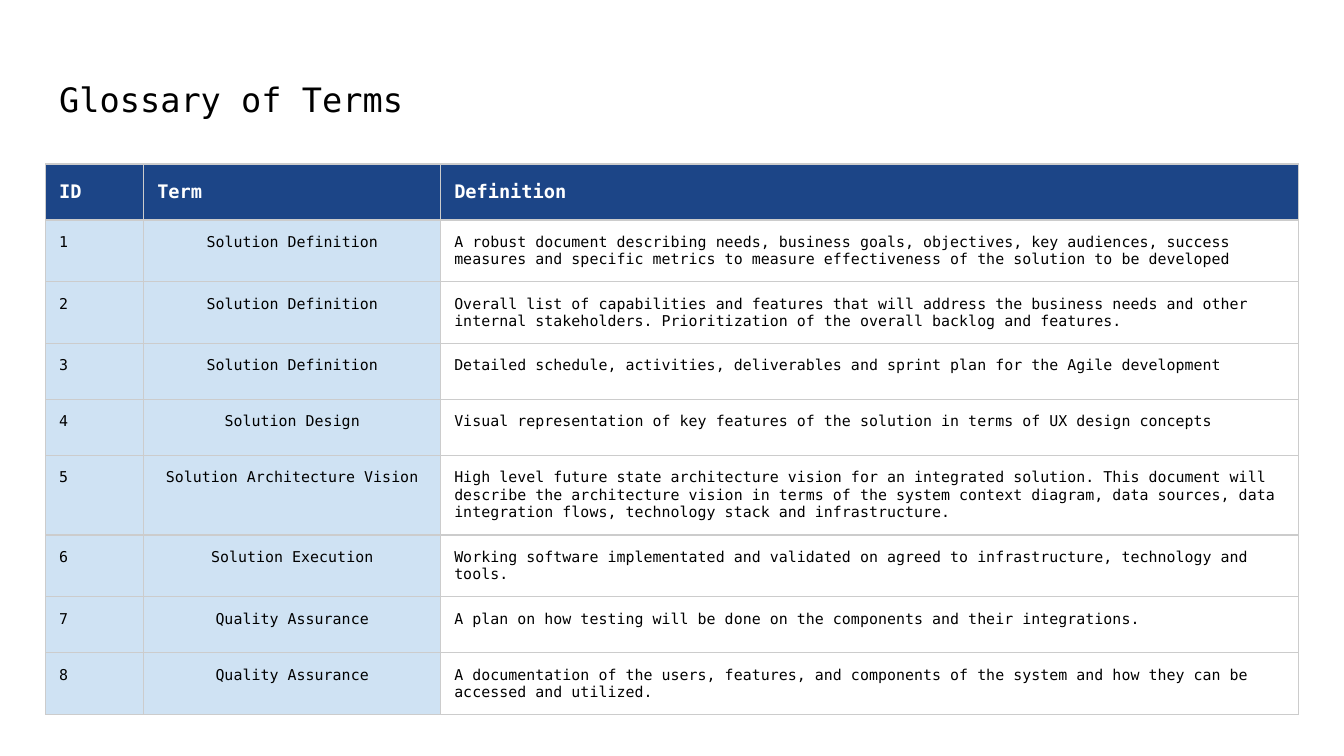
"""Build the Glossary of Terms slide with its table of definitions."""
import pptx
import pptx.dml.color
import pptx.enum.text
import pptx.oxml
import pptx.oxml.ns
import pptx.util

Inches = pptx.util.Inches
FONT = "DejaVu Sans Mono"
COLORS = {
    "white": "FFFFFF",
    "black": "000000",
    "header": "1C4587",
    "key": "CFE2F3",
    "border": "CCCCCC",
}
HEADINGS = ("ID", "Term", "Definition")
GLOSSARY = [
    ("Solution Definition", "A robust document describing needs, business goals, objectives, key audiences, "
     "success measures and specific metrics to measure effectiveness of the solution to be developed"),
    ("Solution Definition", "Overall list of capabilities and features that will address the business needs and "
     "other internal stakeholders. Prioritization of the overall backlog and features."),
    ("Solution Definition", "Detailed schedule, activities, deliverables and sprint plan for the Agile development"),
    ("Solution Design", "Visual representation of key features of the solution in terms of UX design concepts"),
    ("Solution Architecture Vision", "High level future state architecture vision for an integrated solution. "
     "This document will describe the architecture vision in terms of the system context diagram, data sources, "
     "data integration flows, technology stack and infrastructure."),
    ("Solution Execution", "Working software implementated and validated on agreed to infrastructure, "
     "technology and tools."),
    ("Quality Assurance", "A plan on how testing will be done on the components and their integrations."),
    ("Quality Assurance", "A documentation of the users, features, and components of the system and how they "
     "can be accessed and utilized."),
]
COLUMN_WIDTHS = (0.73, 2.21, 6.38)
ROW_HEIGHT = Inches(5) // 12


def write(paragraph, text, size, color, bold=False, centered=False):
    """Add one formatted run to a paragraph."""
    align = pptx.enum.text.PP_ALIGN
    paragraph.alignment = align.CENTER if centered else align.LEFT
    run = paragraph.add_run()
    run.text = text
    run.font.name = FONT
    run.font.size = pptx.util.Pt(size)
    run.font.bold = bold
    run.font.color.rgb = pptx.dml.color.RGBColor.from_string(COLORS[color])


def style_cell(cell, fill):
    """Give a cell its margins, borders and fill."""
    cell.margin_left = cell.margin_right = cell.margin_top = cell.margin_bottom = Inches(0.1)
    for side in ("lnL", "lnR", "lnT", "lnB"):
        cell._tc.get_or_add_tcPr().append(pptx.oxml.parse_xml(
            f'<a:{side} {pptx.oxml.ns.nsdecls("a")} w="{pptx.util.Pt(0.75)}"><a:solidFill>'
            f'<a:srgbClr val="{COLORS["border"]}"/></a:solidFill></a:{side}>'))
    if fill:
        cell.fill.solid()
        cell.fill.fore_color.rgb = pptx.dml.color.RGBColor.from_string(COLORS[fill])
    else:
        cell.fill.background()


deck = pptx.Presentation()
deck.slide_width = Inches(10)
deck.slide_height = deck.slide_width * 9 // 16
slide = deck.slides.add_slide(deck.slide_layouts[5])
slide.background.fill.solid()
slide.background.fill.fore_color.rgb = pptx.dml.color.RGBColor.from_string(COLORS["white"])

title = slide.shapes.title
title.left, title.top, title.width, title.height = map(Inches, (0.34, 0.49, 9.32, 0.63))
heading = title.text_frame
heading.margin_left = heading.margin_right = heading.margin_top = heading.margin_bottom = Inches(0.1)
heading.vertical_anchor = pptx.enum.text.MSO_ANCHOR.TOP
heading.auto_size = pptx.enum.text.MSO_AUTO_SIZE.NONE
heading.word_wrap = True
write(heading.paragraphs[0], "Glossary of Terms", 18, "black")

row_count = len(GLOSSARY) + 1
glossary = slide.shapes.add_table(
    row_count, len(HEADINGS), Inches(0.34), Inches(1.22),
    Inches(sum(COLUMN_WIDTHS)), ROW_HEIGHT * row_count).table
glossary.horz_banding = False
for column, width in zip(glossary.columns, COLUMN_WIDTHS):
    column.width = Inches(width)
for row in glossary.rows:
    row.height = ROW_HEIGHT

for column, label in enumerate(HEADINGS):
    cell = glossary.cell(0, column)
    style_cell(cell, "header")
    cell.vertical_anchor = pptx.enum.text.MSO_ANCHOR.MIDDLE
    write(cell.text_frame.paragraphs[0], label, 10, "white", bold=True)

for number, (term, definition) in enumerate(GLOSSARY, start=1):
    for column, text in enumerate((str(number), term, definition)):
        cell = glossary.cell(number, column)
        style_cell(cell, "key" if column < 2 else None)
        write(cell.text_frame.paragraphs[0], text, 8, "black", centered=column == 1)

deck.save("out.pptx")
